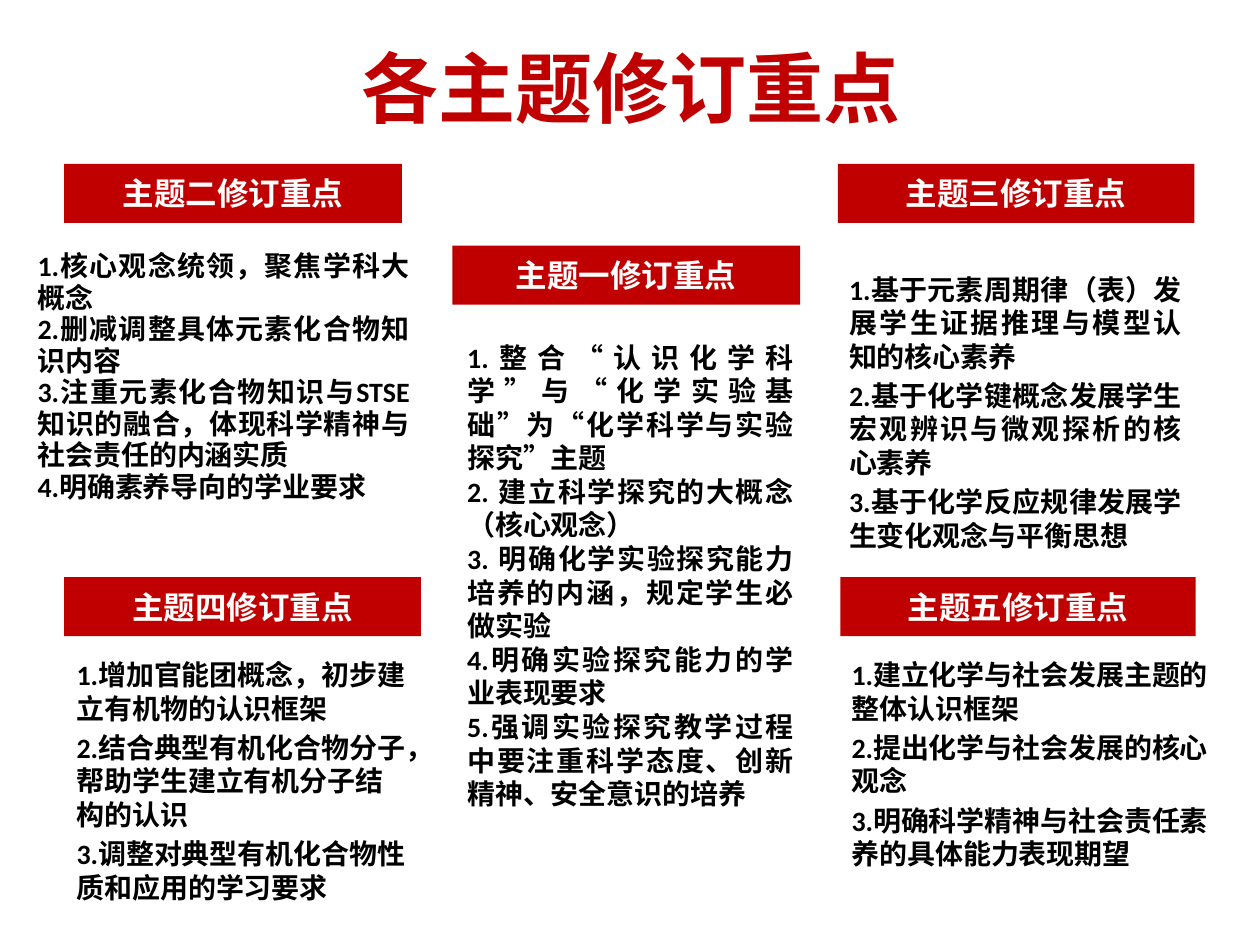
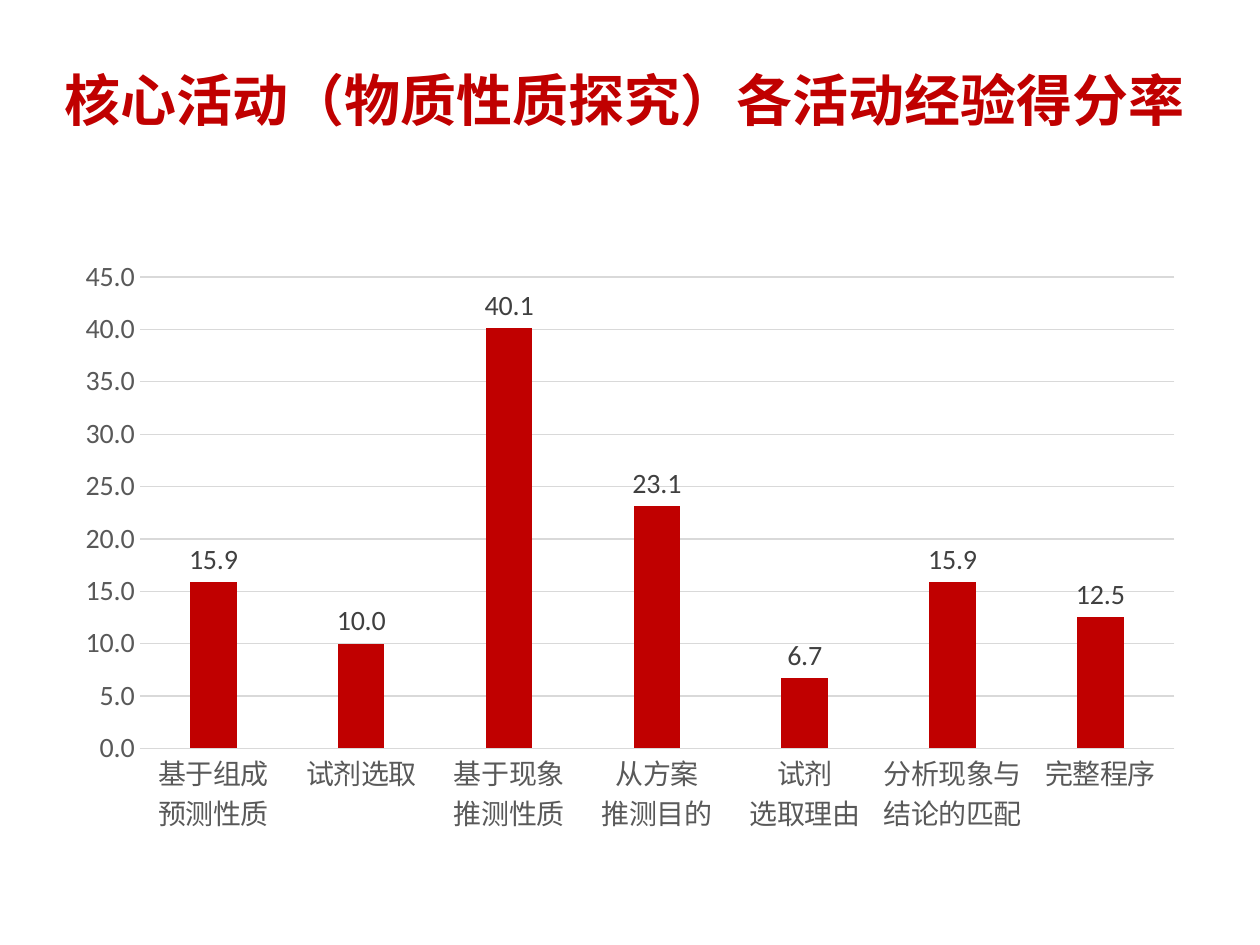
from pptx import Presentation
from pptx import util as u
from pptx.chart.data import CategoryChartData
from pptx.dml.color import RGBColor
from pptx.enum import chart as ch, shapes, text

Pt = u.Pt
FONT = "Calibri"
C = {"red": "C00000", "white": "FFFFFF", "black": "000000",
     "axis": "595959", "label": "404040", "grid": "D9D9D9"}


def style(font, size, color, bold=False):
    font.name, font.size, font.bold = FONT, Pt(size), bold
    font.color.rgb = RGBColor.from_string(C[color])


def add_titled_slide(title, size, box):
    s = prs.slides.add_slide(prs.slide_layouts[5])
    sp = s.shapes.title
    sp.left, sp.top, sp.width, sp.height = map(Pt, box)
    tf = sp.text_frame
    tf.text = title
    tf.auto_size = text.MSO_AUTO_SIZE.NONE
    tf.vertical_anchor = text.MSO_ANCHOR.MIDDLE
    p = tf.paragraphs[0]
    p.alignment = text.PP_ALIGN.CENTER
    style(p.font, size, "red", True)
    return s


prs = Presentation()
prs.slide_width, prs.slide_height = Pt(720), Pt(540)

# Slide 1: five topics, each a red band with a list below
s = add_titled_slide("各主题修订重点", 44, (36.7, 4.3, 648, 90))
BAND_H = 33.8
JUST, LEFT = text.PP_ALIGN.JUSTIFY, text.PP_ALIGN.LEFT

# name, band (left, top, width), list box, alignment, line spacing, space before, items
topics = [
    ("一", (258.5, 140.4, 198.7), (259.9, 190.8, 200.9, 164.2), JUST, None, 0, [
        "1.整合“认识化学科学”与“化学实验基础”为“化学科学与实验探究”主题",
        "2. 建立科学探究的大概念（核心观念）",
        "3. 明确化学实验探究能力培养的内涵，规定学生必做实验",
        "4.明确实验探究能力的学业表现要求",
        "5.强调实验探究教学过程中要注重科学态度、创新精神、安全意识的培养"]),
    ("二", (36.7, 93.6, 193), (14.4, 139.7, 226.8, 157.7), JUST, Pt(18), 0, [
        "1.核心观念统领，聚焦学科大概念",
        "2.删减调整具体元素化合物知识内容",
        "3.注重元素化合物知识与STSE知识的融合，体现科学精神与社会责任的内涵实质",
        "4.明确素养导向的学业要求"]),
    ("三", (478.8, 93.6, 203.8), (478.1, 151.9, 204.5, 181.4), JUST, None, 3.2, [
        "1.基于元素周期律（表）发展学生证据推理与模型认知的核心素养",
        "2.基于化学键概念发展学生宏观辨识与微观探析的核心素养",
        "3.基于化学反应规律发展学生变化观念与平衡思想"]),
    ("四", (36.7, 329.8, 203.8), (36.7, 372.2, 203.8, 121.7), LEFT, None, 3.2, [
        "1.增加官能团概念，初步建立有机物的认识框架",
        "2.结合典型有机化合物分子，帮助学生建立有机分子结构的认识",
        "3.调整对典型有机化合物性质和应用的学习要求"]),
    ("五", (480.2, 329.8, 203), (479.5, 372.2, 231.8, 147.6), LEFT, None, 3.2, [
        "1.建立化学与社会发展主题的整体认识框架",
        "2.提出化学与社会发展的核心观念",
        "3.明确科学精神与社会责任素养的具体能力表现期望"]),
]

for name, band, box, align, spacing, before, items in topics:
    # Band
    sp = s.shapes.add_shape(shapes.MSO_SHAPE.RECTANGLE, *map(Pt, band), Pt(BAND_H))
    sp.shadow.inherit = False
    sp.fill.solid()
    sp.fill.fore_color.rgb = RGBColor.from_string(C["red"])
    sp.line.fill.background()
    tf = sp.text_frame
    tf.text = f"主题{name}修订重点"
    tf.vertical_anchor = text.MSO_ANCHOR.MIDDLE
    p = tf.paragraphs[0]
    p.alignment = text.PP_ALIGN.CENTER
    style(p.font, 18, "white", True)

    # List
    tf = s.shapes.add_textbox(*map(Pt, box)).text_frame
    tf.word_wrap = True
    tf.text = "\n".join(items)
    for p in tf.paragraphs:
        p.alignment = align
        p.space_before = Pt(before)
        if spacing:
            p.line_spacing = spacing
        style(p.font, 16, "black", True)

# Slide 2: score rates as columns
s = add_titled_slide("核心活动（物质性质探究）各活动经验得分率", 32, (20.2, 25.9, 673.9, 61.2))
data = CategoryChartData(number_format="0.0")
data.categories = ["基于组成\n预测性质", "试剂选取", "基于现象\n推测性质", "从方案\n推测目的",
                   "试剂\n选取理由", "分析现象与\n结论的匹配", "完整程序"]
data.add_series("得分率", [15.9, 10, 40.1, 23.1, 6.7, 15.9, 12.5])
chart = s.shapes.add_chart(ch.XL_CHART_TYPE.COLUMN_CLUSTERED,
                           Pt(36), Pt(141.8), Pt(648), Pt(340.6), data).chart
chart.has_title = chart.has_legend = False
style(chart.font, 16, "black")

# Columns and labels
plot = chart.plots[0]
plot.gap_width, plot.overlap, plot.vary_by_categories = 219, -27, False
fill = plot.series[0].format.fill
fill.solid()
fill.fore_color.rgb = RGBColor.from_string(C["red"])
plot.has_data_labels = True
labels = plot.data_labels
labels.show_value = True
labels.position = ch.XL_LABEL_POSITION.OUTSIDE_END
labels.number_format, labels.number_format_is_linked = "0.0", False
style(labels.font, 16, "label")

# Axes
cat, val = chart.category_axis, chart.value_axis
for axis in (cat, val):
    axis.major_tick_mark = axis.minor_tick_mark = ch.XL_TICK_MARK.NONE
    style(axis.tick_labels.font, 16, "axis")
val.minimum_scale, val.maximum_scale, val.major_unit = 0, 45, 5
val.tick_labels.number_format = "0.0"
val.tick_labels.number_format_is_linked = False
val.format.line.fill.background()
for line in (cat.format.line, val.major_gridlines.format.line):
    line.width = Pt(0.75)
    line.color.rgb = RGBColor.from_string(C["grid"])

prs.save("out.pptx")
